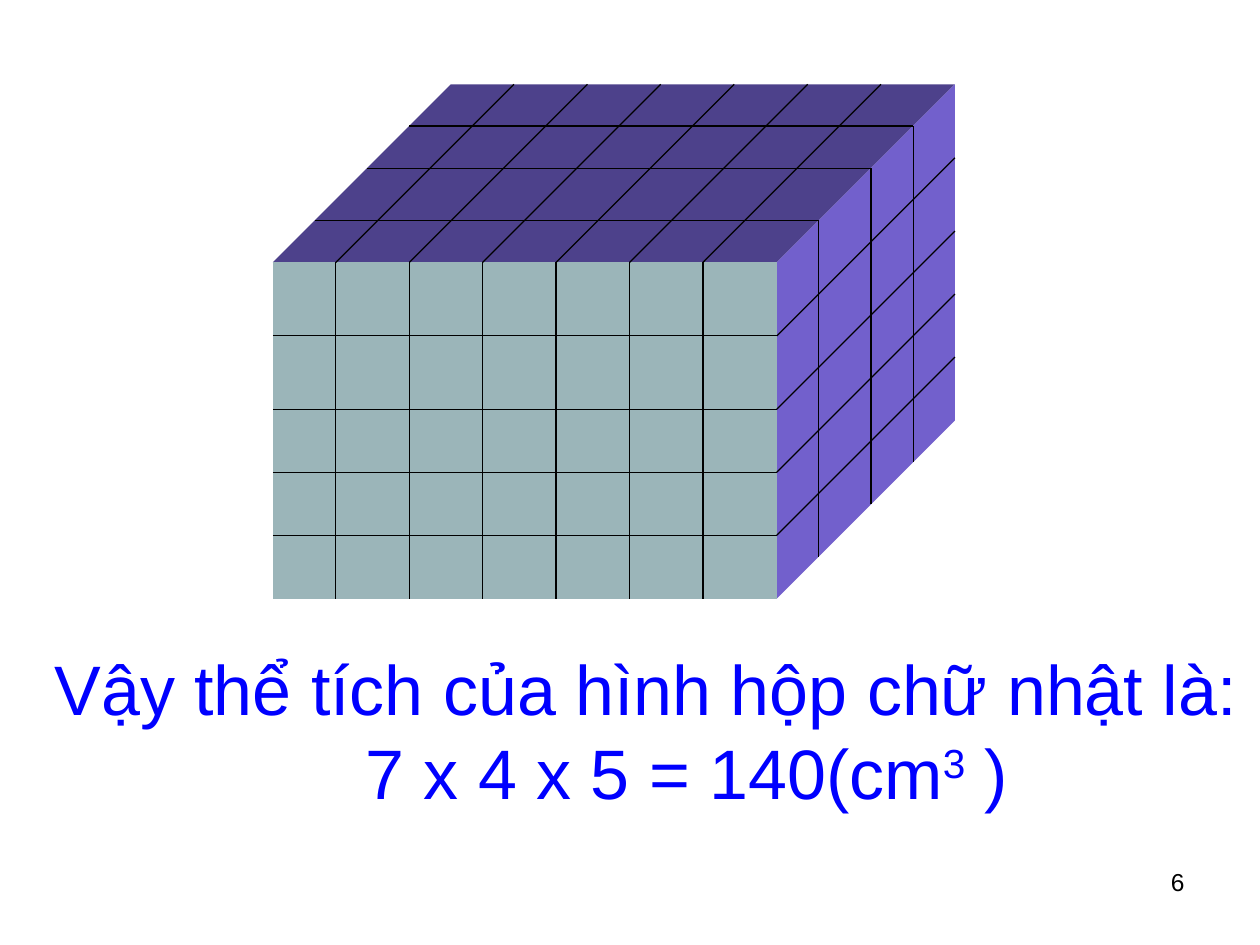
from lxml import etree
from pptx import Presentation
from pptx.dml.color import RGBColor
from pptx.enum.shapes import MSO_CONNECTOR
from pptx.enum.text import PP_ALIGN
from pptx.oxml.ns import qn
from pptx.util import Cm, Pt

STRAIGHT = MSO_CONNECTOR.STRAIGHT
LEFT, RIGHT = PP_ALIGN.LEFT, PP_ALIGN.RIGHT

COLORS = {"front": "9BB5B9", "top": "4D418B", "side": "7260CC",
          "grid": "000000", "answer": "0000FF", "number": "000000"}
ANSWER_FONT = {"name": "Arial", "size": Pt(40)}
NUMBER_FONT = {"name": "Arial", "size": Pt(14)}

# Grid offsets in cm, measured from the front face's top left corner
DEPTH = 3.59
COLUMNS = [1.27 + 1.48 * i for i in range(6)]
ROWS = [1.48, 2.96, 4.23, 5.5]
LAYERS = [0.84, 1.9, 2.75]


def color(name):
    return RGBColor.from_string(COLORS[name])


def add_face(slide, points, color_name):
    corners = [(Cm(x), Cm(y)) for x, y in points]
    builder = slide.shapes.build_freeform(*corners[0], scale=1.0)
    builder.add_line_segments(corners[1:], close=True)
    face = builder.convert_to_shape()
    face.shadow.inherit = False
    face.fill.solid()
    face.fill.fore_color.rgb = color(color_name)
    face.line.fill.background()


def add_grid_line(slide, x1, y1, x2, y2):
    line = slide.shapes.add_connector(STRAIGHT, Cm(x1), Cm(y1), Cm(x2), Cm(y2))
    line.line.color.rgb = color("grid")
    line.line.width = Pt(0.75)
    etree.SubElement(line._element.spPr, qn("a:effectLst"))


def add_cuboid(slide, left, top, width, height):
    """Draw a cuboid of unit cubes inside the given box (cm)."""
    front_top, front_right = top + DEPTH, left + width - DEPTH
    right, bottom = left + width, top + height

    # Faces
    add_face(slide, [(left, front_top), (left + DEPTH, top),
                     (right, top), (front_right, front_top)], "top")
    add_face(slide, [(front_right, front_top), (right, top),
                     (right, bottom - DEPTH), (front_right, bottom)], "side")
    add_face(slide, [(left, front_top), (front_right, front_top),
                     (front_right, bottom), (left, bottom)], "front")

    # Rows run across the front, then back along the side
    for row in ROWS:
        y = front_top + row
        add_grid_line(slide, left, y, front_right, y)
        add_grid_line(slide, front_right, y, right, y - DEPTH)

    # Columns run up the front, then back along the top
    for column in COLUMNS:
        x = left + column
        add_grid_line(slide, x, front_top, x, bottom)
        add_grid_line(slide, x, front_top, x + DEPTH, top)

    # Layers run across the top, then down the side
    for layer in LAYERS:
        x, y = front_right + layer, front_top - layer
        add_grid_line(slide, left + layer, y, x, y)
        add_grid_line(slide, x, y, x, bottom - layer)


def add_text_frame(slide, left, top, width, height):
    box = slide.shapes.add_textbox(Cm(left), Cm(top), Cm(width), Cm(height))
    box.text_frame.word_wrap = True
    return box.text_frame


def add_run(paragraph, text, font_format, color_name):
    run = paragraph.add_run()
    run.text = text
    for attribute, value in font_format.items():
        setattr(run.font, attribute, value)
    run.font.color.rgb = color(color_name)
    return run


def add_answer(slide, left, top, width, height):
    frame = add_text_frame(slide, left, top, width, height)
    statement = frame.paragraphs[0]
    statement.alignment = LEFT
    add_run(statement, "Vậy thể tích của hình hộp chữ nhật là:", ANSWER_FONT, "answer")

    # Indented calculation with a raised exponent
    calculation = frame.add_paragraph()
    calculation.alignment = LEFT
    calculation._p.get_or_add_pPr().set("marL", str(Cm(6.27)))
    add_run(calculation, "7 x 4 x 5 = 140(cm", ANSWER_FONT, "answer")
    exponent = add_run(calculation, "3", ANSWER_FONT, "answer")
    exponent._r.get_or_add_rPr().set("baseline", "30000")
    add_run(calculation, " )", ANSWER_FONT, "answer")


def add_slide_number(slide, left, top, width, height):
    frame = add_text_frame(slide, left, top, width, height)
    paragraph = frame.paragraphs[0]
    paragraph.alignment = RIGHT
    add_run(paragraph, "6", NUMBER_FONT, "number")


def main():
    presentation = Presentation()
    presentation.slide_width, presentation.slide_height = Cm(25.4), Cm(19.05)
    slide = presentation.slides.add_slide(presentation.slide_layouts[6])
    add_slide_number(slide, 18.2, 17.35, 5.93, 1.32)
    add_cuboid(slide, 5.5, 1.7, 13.75, 10.37)
    add_answer(slide, 0.85, 12.88, 24.55, 3.63)
    presentation.save("out.pptx")


if __name__ == "__main__":
    main()
